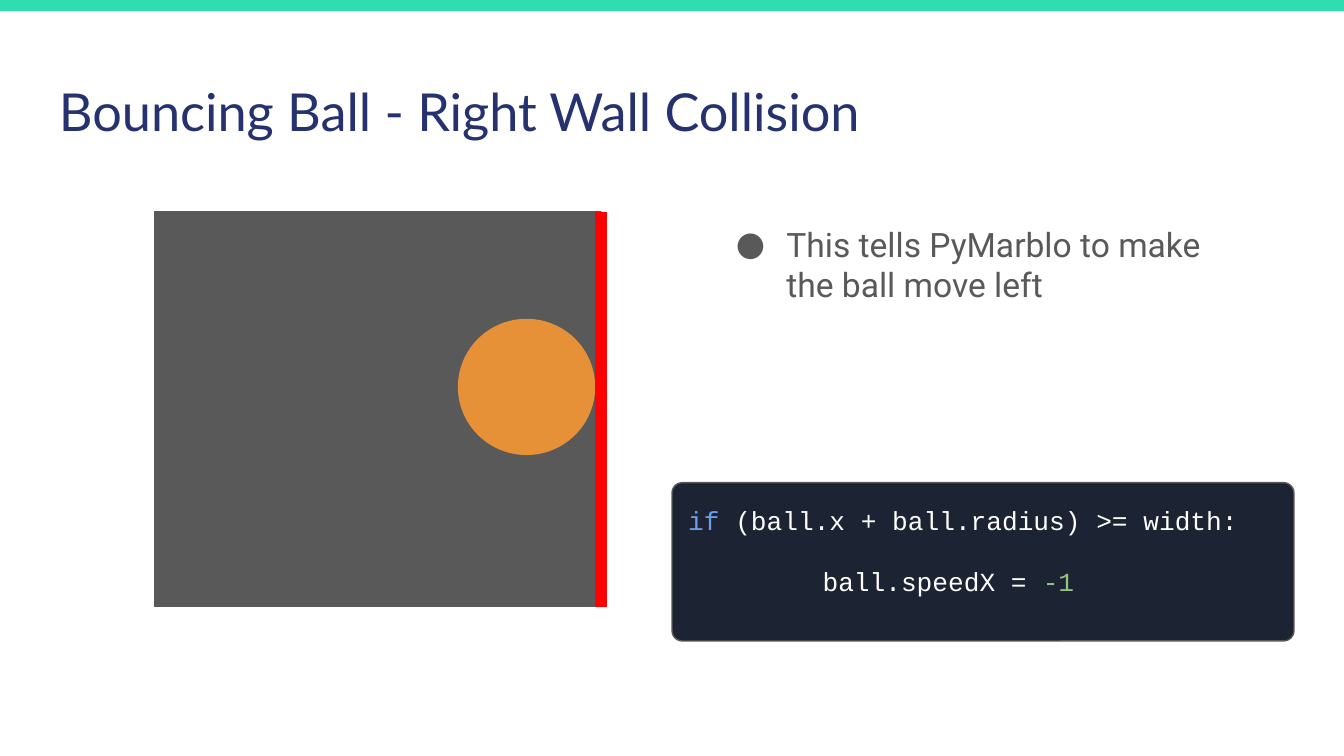
"""Build a slide on the right wall collision of a bouncing ball."""
import lxml.etree
import pptx
import pptx.dml.color
import pptx.enum.shapes
import pptx.enum.text
import pptx.oxml.ns
import pptx.util

Pt = pptx.util.Pt
SHAPE = pptx.enum.shapes.MSO_SHAPE
GREY = "595959"
WHITE = "FFFFFF"
INSET = 7.2


def rgb(value):
    return pptx.dml.color.RGBColor.from_string(value)


def add_child(parent, tag, **attributes):
    child = lxml.etree.SubElement(parent, pptx.oxml.ns.qn(tag))
    for name, value in attributes.items():
        child.set(name, value)
    return child


def add_block(s, kind, box, fill, line=None):
    sp = s.shapes.add_shape(kind, *map(Pt, box))
    sp.shadow.inherit = False
    sp.fill.solid()
    sp.fill.fore_color.rgb = rgb(fill)
    if line:
        sp.line.color.rgb = rgb(line)
        sp.line.width = Pt(0.75)
    else:
        sp.line.fill.background()
    return sp


def add_wall(s, x, top, bottom):
    wall = s.shapes.add_connector(
        pptx.enum.shapes.MSO_CONNECTOR.STRAIGHT, Pt(x), Pt(top), Pt(x), Pt(bottom)
    )
    wall.line.color.rgb = rgb("FF0000")
    wall.line.width = Pt(6)
    add_child(wall.element.spPr, "a:effectLst")


def prepare_frame(sp, top=INSET):
    tf = sp.text_frame
    tf.word_wrap = True
    tf.vertical_anchor = pptx.enum.text.MSO_ANCHOR.TOP
    tf.margin_left = tf.margin_right = tf.margin_bottom = Pt(INSET)
    tf.margin_top = Pt(top)
    return tf


def format_run(r, font, size, color):
    r.font.name = font
    r.font.size = Pt(size)
    r.font.color.rgb = rgb(color)


def add_text(s, box, text, font, size, color):
    sp = s.shapes.add_textbox(*map(Pt, box))
    tf = prepare_frame(sp)
    tf.text = text
    p = tf.paragraphs[0]
    format_run(p.runs[0], font, size, color)
    return p


def add_bullet(p, font, color):
    pPr = p._p.get_or_add_pPr()
    pPr.set("marL", str(Pt(36)))
    pPr.set("indent", str(Pt(-27)))
    add_child(add_child(pPr, "a:buClr"), "a:srgbClr", val=color)
    add_child(pPr, "a:buFont", typeface=font)
    add_child(pPr, "a:buChar", char="●")


def add_code(s, box, lines):
    sp = add_block(s, SHAPE.ROUNDED_RECTANGLE, box, "1C2333", GREY)
    sp.adjustments[0] = 0.065
    tf = prepare_frame(sp, 9.9)
    for i, parts in enumerate(lines):
        p = tf.add_paragraph() if i else tf.paragraphs[0]
        p.alignment = pptx.enum.text.PP_ALIGN.LEFT
        if i:
            p.space_before = p.space_after = Pt(16)
        add_child(add_child(p._p.get_or_add_pPr(), "a:tabLst"),
                  "a:tab", pos=str(Pt(72)), algn="l")
        for text, color in parts:
            r = p.add_run()
            r.text = text
            format_run(r, "Courier New", 14, color)


def main():
    prs = pptx.Presentation()
    prs.slide_width, prs.slide_height = Pt(720), Pt(405)
    s = prs.slides.add_slide(prs.slide_layouts[6])

    add_block(s, SHAPE.RECTANGLE, (0, 0, 720, 5.8), "30DDAE")
    add_text(s, (24.5, 35.3, 671, 45.4), "Bouncing Ball - Right Wall Collision",
             "Lato", 28, "25326F")

    left, top, width, height = canvas = (82.8, 113.5, 239.2, 211.5)
    add_block(s, SHAPE.RECTANGLE, canvas, GREY, GREY)
    add_block(s, SHAPE.OVAL, (245.3, 170.8, 73.6, 73), "E69138")
    add_wall(s, left + width, top, top + height)

    p = add_text(s, (378.2, 112.6, 296.6, 80.4),
                 "This tells PyMarblo to make the ball move left", "Roboto", 18, GREY)
    add_bullet(p, "Roboto", GREY)

    add_code(s, (360, 258.6, 333.2, 84.8), [
        [("if", "6D9EEB"), (" (ball.x + ball.radius) >= width:", WHITE)],
        [("\tball.speedX = ", WHITE), ("-1", "93C47D")],
    ])
    prs.save("out.pptx")


if __name__ == "__main__":
    main()
